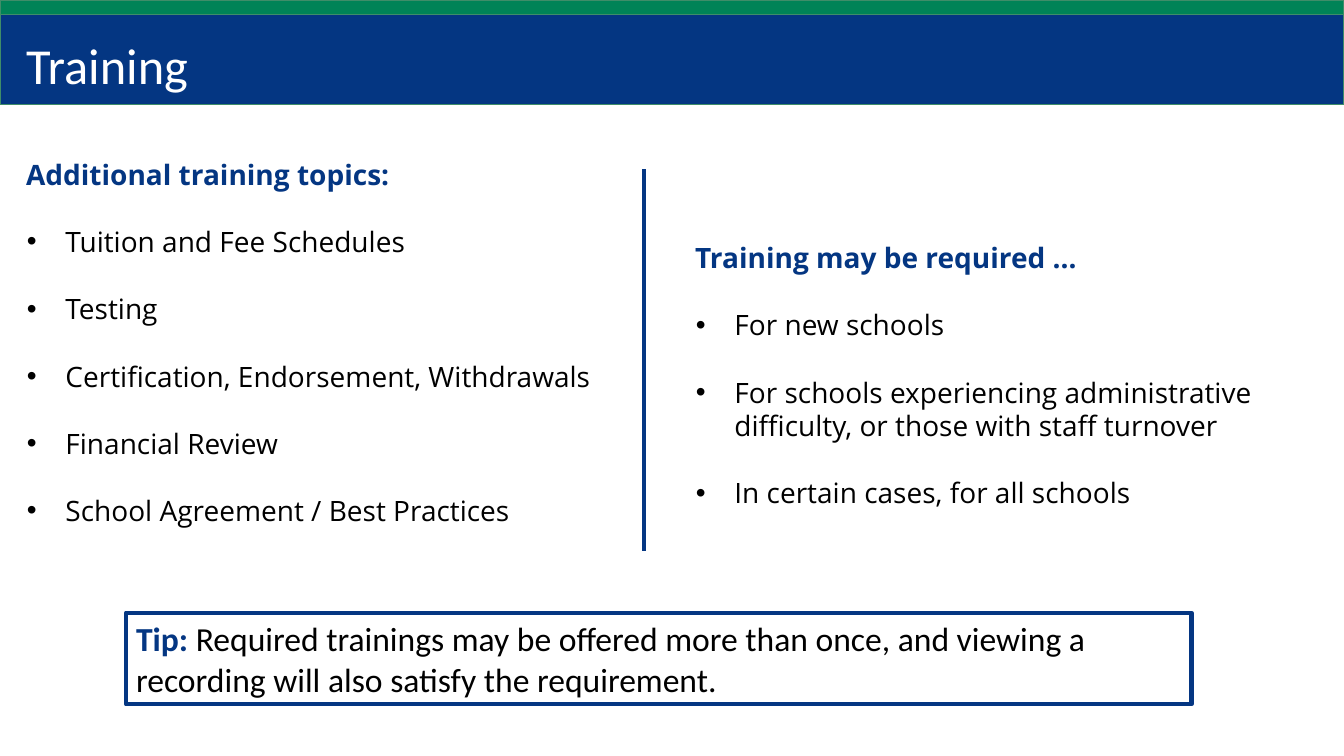
from lxml import etree
from pptx import Presentation
from pptx.dml.color import RGBColor
from pptx.enum import shapes, text
from pptx.oxml import ns
from pptx.util import Cm, Pt

# Content
TITLE = "Training"
COLUMNS = [  # left, top, height in cm, heading, bullets
    (0.41, 3.84, 11.53, "Additional training topics:", [
        "Tuition and Fee Schedules",
        "Testing",
        "Certification, Endorsement, Withdrawals",
        "Financial Review",
        "School Agreement / Best Practices",
    ]),
    (17.27, 5.94, 7.95, "Training may be required …", [
        "For new schools",
        "For schools experiencing administrative difficulty, "
        "or those with staff turnover",
        "In certain cases, for all schools",
    ]),
]
TIP = [
    ("Tip: ", True),
    ("Required trainings may be offered more than once, and viewing a "
     "recording will also satisfy the requirement.", False),
]
WIDTH, HEIGHT = 33.87, 19.05
COLUMN_WIDTH = 16.2
BLUE, GREEN, EDGE = "043682", "008357", "3F8D69"
BLACK, WHITE = "000000", "FFFFFF"
LINE_PITCH = Pt(24)


def color(value):
    return RGBColor.from_string(value)


def style(span, font, size, ink, bold=False):
    span.font.name = font
    span.font.size = Pt(size)
    span.font.color.rgb = color(ink)
    span.font.bold = bold


def add_box(page, left, top, width, height, line, weight, fill=None):
    box = page.shapes.add_shape(shapes.MSO_SHAPE.RECTANGLE,
                                Cm(left), Cm(top), Cm(width), Cm(height))
    box.shadow.inherit = False
    if fill:
        box.fill.solid()
        box.fill.fore_color.rgb = color(fill)
    else:
        box.fill.background()
    box.line.color.rgb = color(line)
    box.line.width = Pt(weight)
    return box


def add_text(page, left, top, width, height):
    frame = page.shapes.add_textbox(Cm(left), Cm(top), Cm(width), Cm(height)).text_frame
    frame.word_wrap = True
    return frame


def add_bullet(para):
    props = para._p.get_or_add_pPr()
    props.set("marL", str(Cm(0.99)))
    props.set("indent", str(-Cm(0.97)))
    font = etree.SubElement(props, ns.qn("a:buFont"))
    font.set("typeface", "Arial")
    mark = etree.SubElement(props, ns.qn("a:buChar"))
    mark.set("char", "•")


def add_column(page, left, top, height, heading, bullets):
    frame = add_text(page, left, top, COLUMN_WIDTH, height)
    for index, words in enumerate([heading] + bullets):
        para = frame.add_paragraph() if index else frame.paragraphs[0]
        para.text = words
        para.line_spacing = LINE_PITCH
        style(para.runs[0], "Open Sans", 20, BLACK if index else BLUE, not index)
        if index:
            para.space_before = LINE_PITCH
            add_bullet(para)


def main():
    deck = Presentation()
    deck.slide_width, deck.slide_height = Cm(WIDTH), Cm(HEIGHT)
    page = deck.slides.add_slide(deck.slide_layouts[6])

    # Header bands and title
    add_box(page, 0, 0, WIDTH, 0.74, EDGE, 1, GREEN)
    add_box(page, 0, 0.37, WIDTH, 2.26, EDGE, 1, BLUE)
    title = add_text(page, 0.41, 0.74, 22.71, 1.8)
    title.text = TITLE
    style(title.paragraphs[0].runs[0], "Calibri", 36, WHITE)

    # Two columns and the divider
    for column in COLUMNS:
        add_column(page, *column)
    divider = page.shapes.add_connector(shapes.MSO_CONNECTOR.STRAIGHT,
                                        Cm(16.23), Cm(4.27), Cm(16.23), Cm(13.89))
    divider.line.color.rgb = color(BLUE)
    divider.line.width = Pt(3)
    etree.SubElement(divider._element.spPr, ns.qn("a:effectLst"))

    # Tip
    tip = add_box(page, 3.18, 15.44, 26.85, 2.31, BLUE, 3).text_frame
    tip.word_wrap = True
    tip.vertical_anchor = text.MSO_ANCHOR.MIDDLE
    para = tip.paragraphs[0]
    para.alignment = text.PP_ALIGN.LEFT
    for words, bold in TIP:
        span = para.add_run()
        span.text = words
        style(span, "Calibri", 24, BLUE if bold else BLACK, bold)

    deck.save("out.pptx")


if __name__ == "__main__":
    main()
